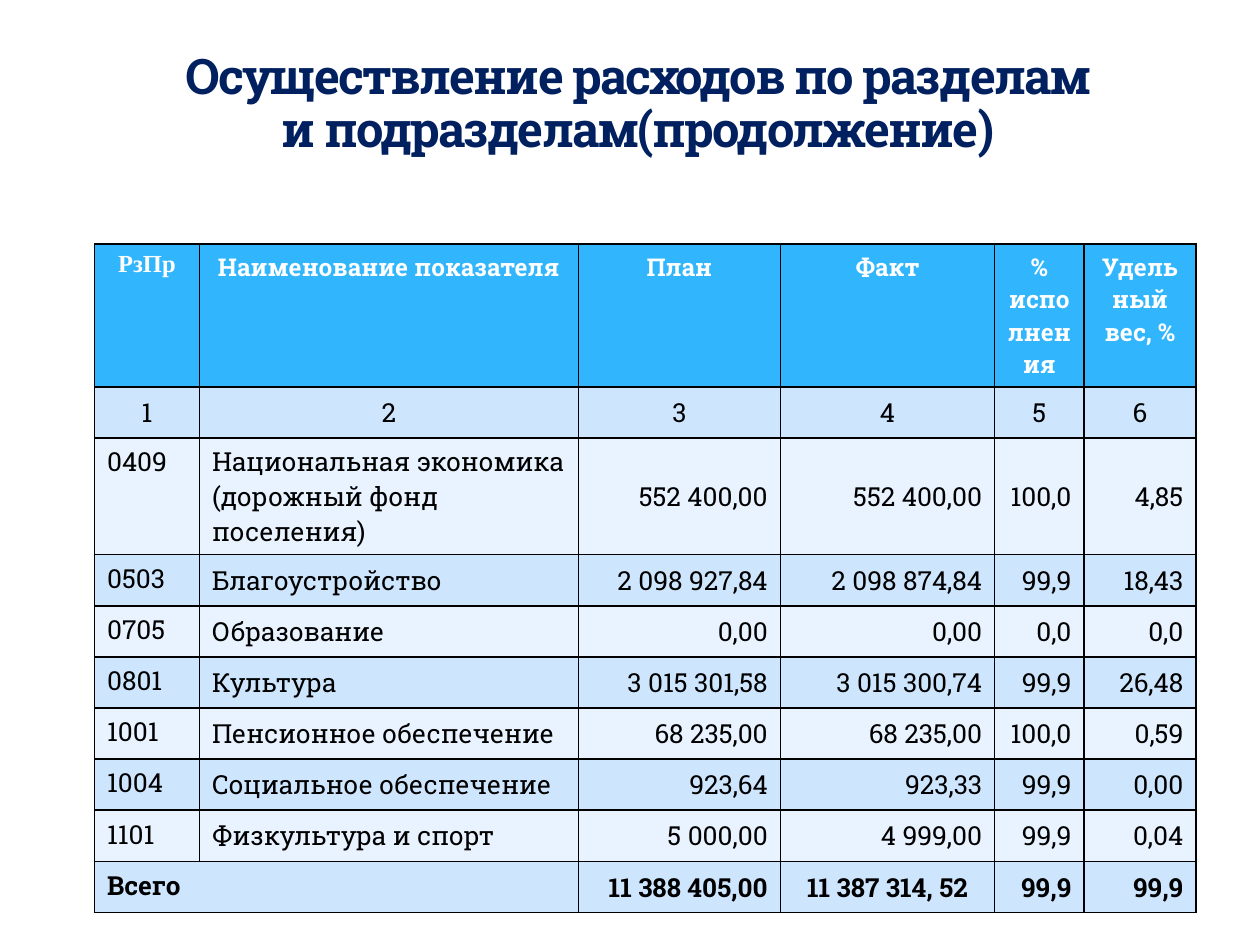
from lxml.etree import SubElement
from pptx import Presentation
from pptx.dml.color import RGBColor
from pptx.enum.text import MSO_ANCHOR as Anchor, PP_ALIGN as Align
from pptx.oxml.ns import qn
from pptx.util import Pt

NAVY = RGBColor(0x00, 0x20, 0x60)
WHITE = RGBColor(0xFF, 0xFF, 0xFF)
BLACK = RGBColor(0x00, 0x00, 0x00)
HEADER_BLUE = RGBColor(0x31, 0xB6, 0xFD)
BAND_BLUE = RGBColor(0xCE, 0xE5, 0xFE)
PALE_BLUE = RGBColor(0xE8, 0xF3, 0xFF)

TITLE = "Осуществление расходов по разделам и подразделам(продолжение)"
HEADER = ["РзПр", "Наименование показателя", "План", "Факт", "% исполнения", "Удельный вес, %"]
NUMBERS = ["1", "2", "3", "4", "5", "6"]
EXPENSES = [
    ["0409", "Национальная экономика (дорожный фонд поселения)",
     "552 400,00", "552 400,00", "100,0", "4,85"],
    ["0503", "Благоустройство", "2 098 927,84", "2 098 874,84", "99,9", "18,43"],
    ["0705", "Образование", "0,00", "0,00", "0,0", "0,0"],
    ["0801", "Культура", "3 015 301,58", "3 015 300,74", "99,9", "26,48"],
    ["1001", "Пенсионное обеспечение", "68 235,00", "68 235,00", "100,0", "0,59"],
    ["1004", "Социальное обеспечение", "923,64", "923,33", "99,9", "0,00"],
    ["1101", "Физкультура и спорт", "5 000,00", "4 999,00", "99,9", "0,04"],
]
TOTAL = ["Всего", "", "11 388 405,00", "11 387 314, 52", "99,9", "99,9"]
COLUMN_WIDTHS = [60, 216.5, 115.5, 122.5, 51, 64]
HEADER_HEIGHT, ROW_HEIGHT = 62.6, 29.2


def write(frame, text, *, font="Roboto Slab", size=15, color=BLACK, bold=False,
          align=Align.LEFT, anchor=Anchor.MIDDLE, line_spacing=None, tracking=None):
    frame.word_wrap = True
    frame.vertical_anchor = anchor
    para = frame.paragraphs[0]
    para.alignment = align
    if line_spacing:
        para.line_spacing = line_spacing
    span = para.add_run()
    span.text = text
    span.font.name = font
    span.font.size = Pt(size)
    span.font.bold = bold
    span.font.color.rgb = color
    if tracking:
        span.font._element.set("spc", str(tracking * 100))


class ReportPage:
    """Draws the title and the expense table on one slide in a shared style."""

    def __init__(self, page):
        self.page = page
        self.border_width = Pt(1)
        self.border_color = BLACK

    def title(self, text, left, top, width, height):
        box = self.page.shapes.add_textbox(Pt(left), Pt(top), Pt(width), Pt(height))
        frame = box.text_frame
        frame.margin_left = frame.margin_right = Pt(10)
        frame.margin_top = frame.margin_bottom = 0
        write(frame, text, size=28, color=NAVY, bold=True, align=Align.CENTER,
              anchor=Anchor.BOTTOM, line_spacing=0.9, tracking=-1)

    def table(self, rows, left, top):
        heights = [HEADER_HEIGHT] + [ROW_HEIGHT] * (len(rows) - 1)
        table = self.page.shapes.add_table(
            len(rows), len(COLUMN_WIDTHS), Pt(left), Pt(top),
            Pt(sum(COLUMN_WIDTHS)), Pt(sum(heights))).table
        for column, width in zip(table.columns, COLUMN_WIDTHS):
            column.width = Pt(width)
        for row, height in zip(table.rows, heights):
            row.height = Pt(height)
        last = len(rows) - 1
        table.cell(last, 0).merge(table.cell(last, 1))
        for r, texts in enumerate(rows):
            for c, text in enumerate(texts):
                self.cell(table.cell(r, c), text, r, c, last)

    def cell(self, cell, text, row, column, last):
        self.borders(cell)
        cell.fill.solid()
        if row == 0:
            cell.fill.fore_color.rgb = HEADER_BLUE
            write(cell.text_frame, text, size=14, color=WHITE, bold=True, align=Align.CENTER,
                  font="Roboto Slab" if column else "Times New Roman")
            cell.vertical_anchor = Anchor.TOP
            return
        cell.fill.fore_color.rgb = BAND_BLUE if row % 2 else PALE_BLUE
        if cell.is_spanned:
            return
        centred = row == 1 or (row == last and column == 3)
        align = Align.CENTER if centred else Align.LEFT if column < 2 else Align.RIGHT
        write(cell.text_frame, text, bold=row == last, align=align)
        at_top = row > 1 and (column == 0 or (row == 2 and column == 1))
        cell.vertical_anchor = Anchor.TOP if at_top else Anchor.MIDDLE

    def borders(self, cell):
        properties = cell._tc.get_or_add_tcPr()
        for side in ("a:lnL", "a:lnR", "a:lnT", "a:lnB"):
            line = SubElement(properties, qn(side), w=str(self.border_width))
            fill = SubElement(line, qn("a:solidFill"))
            SubElement(fill, qn("a:srgbClr"), val=str(self.border_color))


def main():
    deck = Presentation()
    deck.slide_width, deck.slide_height = Pt(720), Pt(540)
    report = ReportPage(deck.slides.add_slide(deck.slide_layouts[6]))
    report.table([HEADER, NUMBERS, *EXPENSES, TOTAL], 54, 139.5)
    report.title(TITLE, 88, 54.5, 553, 36)
    deck.save("out.pptx")


if __name__ == "__main__":
    main()
